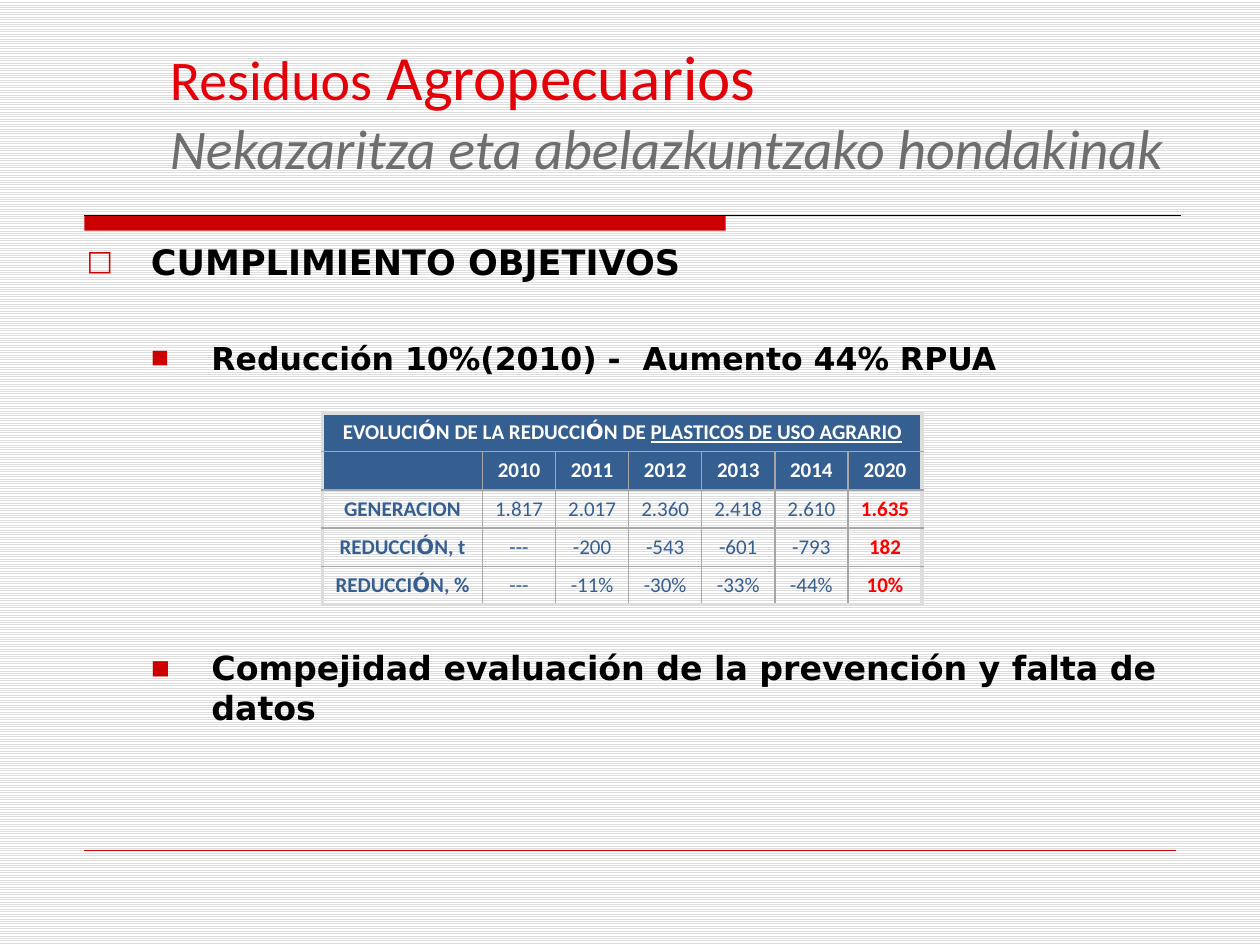
from itertools import groupby

from lxml.etree import SubElement
from pptx import Presentation
from pptx.dml.color import RGBColor
from pptx.enum.dml import MSO_PATTERN as Pattern
from pptx.enum.shapes import MSO_CONNECTOR as Connector, MSO_SHAPE as Shape
from pptx.enum.text import MSO_ANCHOR as Anchor, PP_ALIGN as Align
from pptx.oxml.ns import qn
from pptx.util import Inches, Pt

RED, BLUE, GREY, PALE = "CC0000", "365F91", "A6A6A6", "DDDDDD"
BLACK, WHITE, ALERT = "000000", "FFFFFF", "FF0000"
SANS, WIDE = "Calibri", "DejaVu Sans"
COLUMNS, ROWS = 100, 75


def color(value):
    return RGBColor.from_string(value)


class Board:
    """Holds the deck, its current page and the drawing style on a 100 by 75 grid."""

    def __init__(self, width, height):
        self.deck = Presentation()
        self.deck.slide_width, self.deck.slide_height = Inches(width), Inches(height)
        self.page = self.deck.slides.add_slide(self.deck.slide_layouts[6])

    def x(self, columns):
        return round(self.deck.slide_width * columns / COLUMNS)

    def y(self, rows):
        return round(self.deck.slide_height * rows / ROWS)

    def area(self, left, top, width, height):
        return self.x(left), self.y(top), self.x(width), self.y(height)

    def background(self, front, back):
        fill = self.page.background.fill
        fill.patterned()
        fill.pattern = Pattern.LIGHT_HORIZONTAL
        fill.fore_color.rgb, fill.back_color.rgb = color(front), color(back)

    def bar(self, place, tint):
        bar = self.page.shapes.add_shape(Shape.RECTANGLE, *self.area(*place))
        bar.shadow.inherit = False
        bar.fill.solid()
        bar.fill.fore_color.rgb = color(tint)
        bar.line.fill.background()

    def rule(self, left, right, row, tint, weight):
        line = self.page.shapes.add_connector(
            Connector.STRAIGHT, self.x(left), self.y(row), self.x(right), self.y(row))
        line.line.color.rgb, line.line.width = color(tint), Pt(weight)
        SubElement(line._element.spPr, qn("a:effectLst"))

    def style(self, span, size, tint, font, bold=False, italic=False, underline=False):
        span.font.size, span.font.name, span.font.color.rgb = Pt(size), font, color(tint)
        span.font.bold, span.font.italic, span.font.underline = bold, italic, underline

    def frame(self, place, anchor):
        box = self.page.shapes.add_textbox(*self.area(*place))
        box.text_frame.word_wrap = True
        box.text_frame.vertical_anchor = anchor
        return box.text_frame

    def title(self, place, lines):
        frame = self.frame(place, Anchor.BOTTOM)
        frame.text = "\n".join("" for _ in lines)
        for para, spans in zip(frame.paragraphs, lines):
            for text, size, tint, italic in spans:
                span = para.add_run()
                span.text = text
                self.style(span, size, tint, SANS, italic=italic)

    def bullets(self, place, items):
        frame = self.frame(place, Anchor.TOP)
        frame.text = "\n".join(item[0] for item in items)
        for para, (_, size, gap, level, margin, hang, mark, scale) in zip(frame.paragraphs, items):
            para.level, para.space_before = level, Pt(gap)
            self.style(para.runs[0], size, BLACK, WIDE, bold=True)
            props = para._p.get_or_add_pPr()
            props.set("marL", str(self.x(margin)))
            props.set("indent", str(-self.x(hang)))
            tone = SubElement(props, qn("a:buClr"))
            SubElement(tone, qn("a:srgbClr"), val=RED)
            SubElement(props, qn("a:buSzPct"), val=str(scale * 1000))
            SubElement(props, qn("a:buFont"), typeface=WIDE)
            SubElement(props, qn("a:buChar"), char=mark)

    def borders(self, cell, outer):
        props = cell._tc.get_or_add_tcPr()
        for side, edge in zip("LRTB", outer):
            line = SubElement(props, qn("a:ln" + side), w=str(Pt(2.25 if edge else 1)))
            fill = SubElement(line, qn("a:solidFill"))
            SubElement(fill, qn("a:srgbClr"), val=PALE if edge else GREY)

    def label(self, cell, parts, tint, bold):
        para = cell.text_frame.paragraphs[0]
        para.alignment = Align.CENTER
        cell.vertical_anchor = Anchor.MIDDLE
        cell.margin_left = cell.margin_right = Inches(0.05)
        for text, underline in parts:
            for accented, letters in groupby(text, lambda letter: letter == "Ó"):
                span = para.add_run()
                span.text = "".join(letters)
                self.style(span, 12, tint, WIDE if accented else SANS, bold, underline=underline)
        SubElement(para._p, qn("a:endParaRPr"), sz="1200")

    def table(self, left, top, widths, height, heading, records):
        count, last = len(records) + 1, len(widths) - 1
        place = self.area(left, top, sum(widths), height * count)
        table = self.page.shapes.add_table(count, len(widths), *place).table
        table.first_row = table.horz_banding = False
        for column, width in zip(table.columns, widths):
            column.width = self.x(width)
        rows = [[heading] + [[] for _ in widths[1:]]]
        rows += [[[(text, False)] if text else [] for text in record] for record in records]
        for r, row in enumerate(rows):
            for c, parts in enumerate(row):
                cell, head = table.cell(r, c), r < 2
                tint = WHITE if head else ALERT if c == last else BLUE
                self.label(cell, parts, tint, head or c in (0, last))
                self.borders(cell, (c == 0, c == last or r == 0, r == 0, r == count - 1))
                if head:
                    cell.fill.solid()
                    cell.fill.fore_color.rgb = color(BLUE)
                else:
                    cell.fill.background()
        table.cell(0, 0).merge(table.cell(0, last))


def main():
    board = Board(10, 7.5)
    board.background(PALE, WHITE)
    board.bar((6.7, 17.1, 50.9, 1.2), RED)
    board.rule(6.7, 93.7, 17.1, BLACK, 0.75)
    board.rule(6.7, 93.3, 67.5, RED, 0.25)
    board.bullets((5.9, 18.6, 88.3, 46.7), [
        ("CUMPLIMIENTO OBJETIVOS", 20, 4, 0, 5.1, 5.1, "□", 80),
        ("Reducción 10%(2010) -  Aumento 44% RPUA", 18, 32, 1, 9.9, 4.8, "■", 60),
        ("Compejidad evaluación de la prevención y falta de datos", 19, 155, 1, 9.9, 4.8, "■", 60),
    ])
    board.table(
        25.6, 32.8, [12.7] + [5.8] * 5 + [5.9], 3.04,
        [("EVOLUCIÓN DE LA REDUCCIÓN DE ", False), ("PLASTICOS DE USO AGRARIO", True)],
        [
            ["", "2010", "2011", "2012", "2013", "2014", "2020"],
            ["GENERACION", "1.817", "2.017", "2.360", "2.418", "2.610", "1.635"],
            ["REDUCCIÓN, t", "---", "-200", "-543", "-601", "-793", "182"],
            ["REDUCCIÓN, %", "---", "-11%", "-30%", "-33%", "-44%", "10%"],
        ])
    board.title((12.5, 3.1, 82.8, 11.7), [
        [("Residuos", 32, "E30009", False), (" Agropecuarios", 36, "E30009", False)],
        [("Nekazaritza eta abelazkuntzako hondakinak", 32, "6E6E6E", True)],
    ])
    board.deck.save("out.pptx")


if __name__ == "__main__":
    main()
